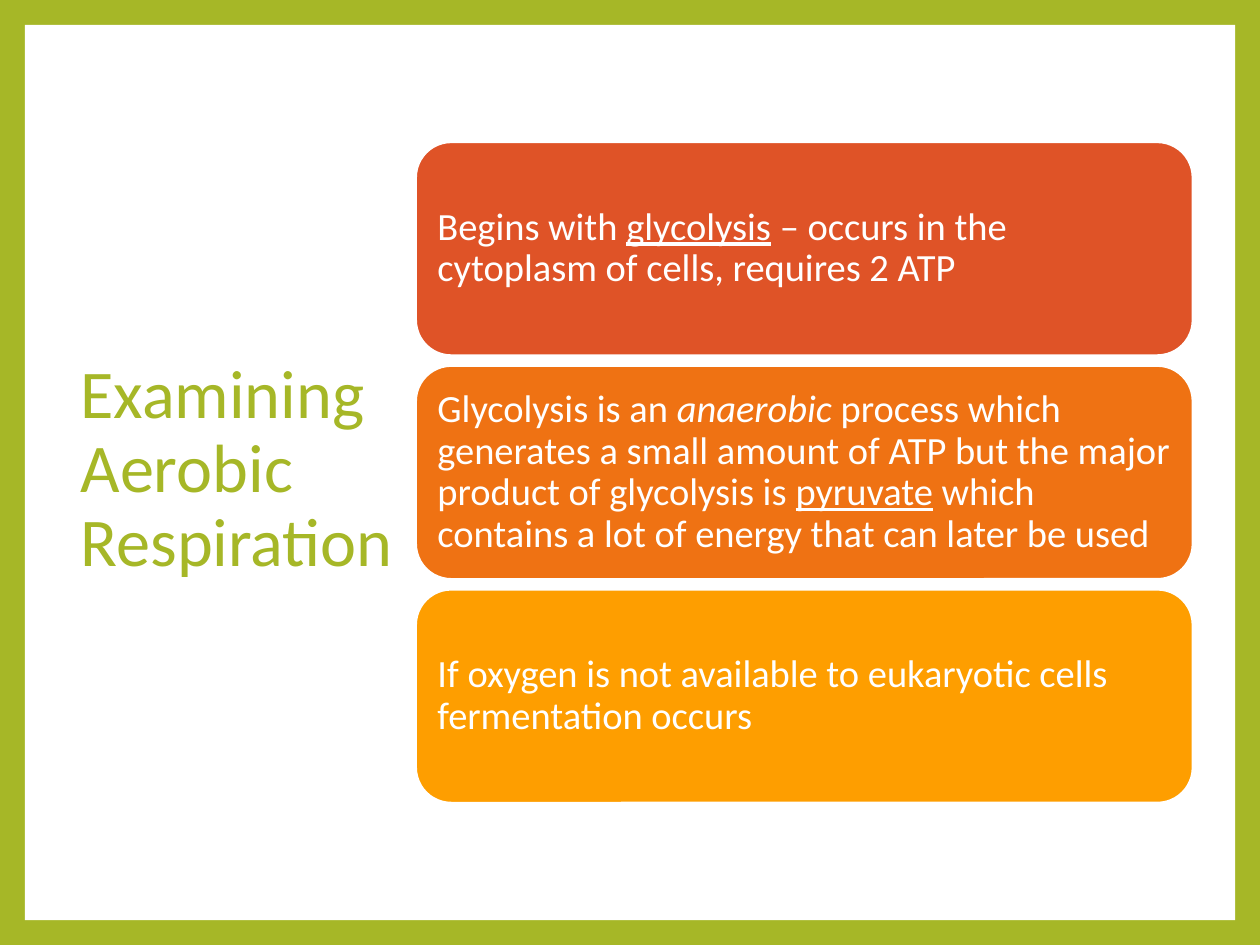
from pptx import Presentation
from pptx.dml.color import RGBColor
from pptx.enum.shapes import MSO_SHAPE as SHAPE
from pptx.enum.text import MSO_ANCHOR as ANCHOR, MSO_AUTO_SIZE as AUTO, PP_ALIGN as ALIGN
from pptx.util import Cm, Pt

GREEN = RGBColor(0xA6, 0xB7, 0x27)
WHITE = RGBColor(0xFF, 0xFF, 0xFF)
RED = RGBColor(0xDF, 0x53, 0x27)
ORANGE = RGBColor(0xEF, 0x72, 0x13)
AMBER = RGBColor(0xFE, 0x9E, 0x00)

CARDS = [
    (RED, [("Begins with ", {}), ("glycolysis", {"underline": True}),
           (" – occurs in the cytoplasm of cells, requires 2 ATP", {})]),
    (ORANGE, [("Glycolysis is an ", {}), ("anaerobic", {"italic": True}),
              (" process which generates a small amount of ATP but the major"
               " product of glycolysis is ", {}),
              ("pyruvate", {"underline": True}),
              (" which contains a lot of energy that can later be used", {})]),
    (AMBER, [("If oxygen is not available to eukaryotic cells fermentation occurs", {})]),
]


def apply(obj, values):
    for name, value in values.items():
        setattr(obj, name, value)


class Deck:
    """Slide style and the elements drawn on the current slide."""

    font = "Calibri"
    inset = Cm(0.23)
    frame = {"word_wrap": True, "auto_size": AUTO.NONE, "vertical_anchor": ANCHOR.MIDDLE}
    para = {"alignment": ALIGN.LEFT, "line_spacing": 0.9}

    def __init__(self, prs):
        self.s = prs.slides.add_slide(prs.slide_layouts[5])

    def background(self, color):
        fill = self.s.background.fill
        fill.solid()
        fill.fore_color.rgb = color

    def add_text(self, sp, runs, size, color):
        tf = sp.text_frame
        apply(tf, self.frame)
        p = tf.paragraphs[0]
        apply(p, self.para)
        for text, style in runs:
            r = p.add_run()
            r.text = text
            apply(r.font, {"name": self.font, "size": Pt(size), **style})
            r.font.color.rgb = color

    def box(self, kind, left, top, width, height, color):
        sp = self.s.shapes.add_shape(kind, Cm(left), Cm(top), Cm(width), Cm(height))
        sp.shadow.inherit = False
        sp.fill.solid()
        sp.fill.fore_color.rgb = color
        sp.line.fill.background()
        return sp

    def panel(self, *place):
        sp = self.box(SHAPE.RECTANGLE, *place, WHITE)
        self.s.shapes.element.insert(2, sp.element)

    def title(self, text, left, top, width, height):
        sp = self.s.shapes.title
        apply(sp, {"left": Cm(left), "top": Cm(top), "width": Cm(width), "height": Cm(height)})
        self.add_text(sp, [(text, {})], 39, GREEN)

    def card(self, left, top, width, height, color, runs):
        sp = self.box(SHAPE.ROUNDED_RECTANGLE, left, top, width, height, color)
        sp.line.color.rgb = WHITE
        sp.line.width = Pt(1.5)
        sides = ("left", "top", "right", "bottom")
        apply(sp.text_frame, {f"margin_{side}": self.inset for side in sides})
        self.add_text(sp, runs, 22, WHITE)


def main():
    prs = Presentation()
    apply(prs, {"slide_width": Cm(25.4), "slide_height": Cm(19.05)})
    deck = Deck(prs)
    deck.background(GREEN)
    deck.panel(0.5, 0.5, 24.4, 18.05)
    deck.title("Examining Aerobic Respiration", 1.37, 1.7, 7.01, 15.57)
    top, height, gap = 2.86, 4.31, 0.2
    for i, (color, runs) in enumerate(CARDS):
        deck.card(8.38, top + i * (height + gap), 15.67, height, color, runs)
    prs.save("out.pptx")


if __name__ == "__main__":
    main()
